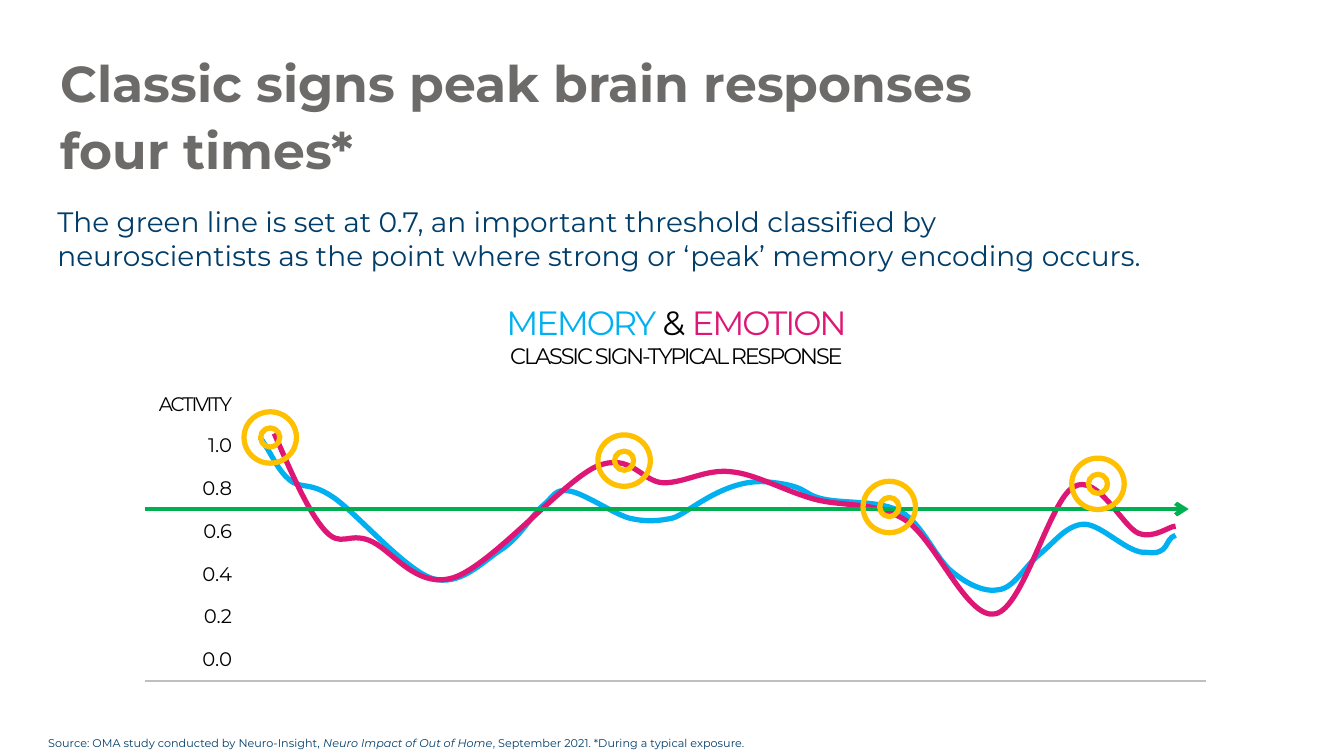
from dataclasses import dataclass

from lxml import etree
from pptx import Presentation
from pptx.dml.color import RGBColor
from pptx.enum.shapes import MSO_CONNECTOR, MSO_SHAPE
from pptx.enum.text import MSO_ANCHOR, PP_ALIGN
from pptx.oxml.ns import qn
from pptx.util import Inches, Pt

STRAIGHT = MSO_CONNECTOR.STRAIGHT
OVAL = MSO_SHAPE.OVAL
TOP = MSO_ANCHOR.TOP
LEFT, CENTER, RIGHT = PP_ALIGN.LEFT, PP_ALIGN.CENTER, PP_ALIGN.RIGHT


@dataclass(frozen=True)
class Theme:
    """Colours, font and type sizes of the slide."""
    font: str = "Montserrat"
    heading: str = "6C6B6A"
    navy: str = "003D69"
    black: str = "000000"
    memory: str = "00B0F0"
    emotion: str = "DE1776"
    threshold: str = "00B050"
    peak: str = "FFC000"
    axis: str = "BFBFBF"
    title_size: int = 36
    legend_size: int = 24
    intro_size: int = 20
    caption_size: int = 16
    label_size: int = 14
    source_size: int = 8
    curve_width: float = 3.75
    tight: int = -150


THEME = Theme()

MEMORY = [
    (1.58, 1.34),
    (1.7, 1.51), (1.75, 1.66), (1.87, 1.76),
    (1.99, 1.86), (2.06, 1.77), (2.3, 1.93),
    (2.54, 2.09), (3.01, 2.65), (3.29, 2.74),
    (3.56, 2.82), (3.78, 2.58), (3.96, 2.46),
    (4.15, 2.34), (4.27, 2.12), (4.38, 2.02),
    (4.5, 1.92), (4.5, 1.85), (4.64, 1.87),
    (4.79, 1.89), (5.07, 2.09), (5.24, 2.14),
    (5.41, 2.18), (5.53, 2.17), (5.67, 2.14),
    (5.82, 2.1), (6.17, 1.75), (6.6, 1.78),
    (7.03, 1.82), (6.94, 1.9), (7.16, 1.95),
    (7.39, 2.0), (7.73, 1.96), (7.94, 2.08),
    (8.15, 2.2), (8.28, 2.54), (8.44, 2.67),
    (8.6, 2.8), (8.77, 2.88), (8.91, 2.85),
    (9.06, 2.83), (9.17, 2.61), (9.31, 2.5),
    (9.45, 2.39), (9.57, 2.21), (9.75, 2.2),
    (9.93, 2.2), (10.19, 2.5), (10.37, 2.48),
    (10.61, 2.51), (10.54, 2.35), (10.66, 2.31),
]
EMOTION = [
    (1.72, 1.3),
    (1.89, 1.69), (2.06, 2.08), (2.22, 2.26),
    (2.38, 2.44), (2.45, 2.28), (2.66, 2.36),
    (2.88, 2.44), (3.12, 2.85), (3.5, 2.73),
    (3.87, 2.61), (4.57, 1.79), (4.91, 1.63),
    (5.26, 1.48), (5.36, 1.78), (5.58, 1.79),
    (5.8, 1.79), (6.0, 1.65), (6.25, 1.68),
    (6.49, 1.7), (6.78, 1.87), (7.07, 1.95),
    (7.35, 2.03), (7.68, 1.97), (7.98, 2.16),
    (8.28, 2.35), (8.59, 3.15), (8.87, 3.09),
    (9.15, 3.04), (9.41, 1.96), (9.65, 1.83),
    (9.88, 1.69), (10.13, 2.22), (10.29, 2.29),
    (10.45, 2.35), (10.59, 2.22), (10.66, 2.22),
]
PEAKS = [(1.68, 1.34), (5.19, 1.57), (7.82, 2.03), (9.89, 1.8)]


def add_text(s, box, paragraphs, align=LEFT, inset=(0.1, 0.05), spacing=None):
    """Add a text box whose paragraphs are lists of (text, size, colour, style)."""
    tf = s.shapes.add_textbox(*map(Inches, box)).text_frame
    tf.word_wrap = True
    tf.vertical_anchor = TOP
    tf.margin_left = tf.margin_right = Inches(inset[0])
    tf.margin_top = tf.margin_bottom = Inches(inset[1])
    for i, runs in enumerate(paragraphs):
        p = tf.add_paragraph() if i else tf.paragraphs[0]
        p.alignment = align
        if spacing:
            p.line_spacing = spacing
        for text, size, color, style in runs:
            r = p.add_run()
            r.text = text
            r.font.name = THEME.font
            r.font.size = Pt(size)
            r.font.color.rgb = RGBColor.from_string(color)
            r.font.bold = style == "bold"
            r.font.italic = style == "italic"
            if style == "tight":
                r.font._element.set("spc", str(THEME.tight))


def style_line(sp, color, width):
    """Set the colour and width in points of an outline."""
    sp.line.color.rgb = RGBColor.from_string(color)
    sp.line.width = Pt(width)


def add_rule(s, x1, x2, y, color, width, arrow=False):
    """Add a horizontal line, with an arrowhead at its right end if asked."""
    line = s.shapes.add_connector(
        STRAIGHT, Inches(x1), Inches(y), Inches(x2), Inches(y))
    style_line(line, color, width)
    if arrow:
        etree.SubElement(line.line._get_or_add_ln(), qn("a:tailEnd"), type="arrow")
    etree.SubElement(line._element.spPr, qn("a:effectLst"))


def add_curve(s, x, y, points, color):
    """Add an open Bezier curve: a start, then three points for each segment."""
    pts = [(Inches(x + px), Inches(y + py)) for px, py in points]
    builder = s.shapes.build_freeform(*pts[0])
    builder.add_line_segments(pts[1:], close=False)
    sp = builder.convert_to_shape()
    sp.shadow.inherit = False
    sp.fill.background()
    style_line(sp, color, THEME.curve_width)
    path = next(sp._element.iter(qn("a:path")))
    steps = path.findall(qn("a:lnTo"))
    for i in range(0, len(steps), 3):
        bezier = etree.SubElement(path, qn("a:cubicBezTo"))
        for step in steps[i:i + 3]:
            bezier.append(step[0])
            path.remove(step)


def add_peak(s, cx, cy):
    """Add a target of two rings around a centre."""
    for w, h in ((0.52, 0.51), (0.19, 0.19)):
        ring = s.shapes.add_shape(
            OVAL, Inches(cx - w / 2), Inches(cy - h / 2), Inches(w), Inches(h))
        ring.shadow.inherit = False
        ring.fill.background()
        style_line(ring, THEME.peak, THEME.curve_width)


def add_header(s, x, y, w):
    """Add the title and the introduction below it."""
    add_text(s, (x + 0.13, y, 9.23, 1.34),
             [[("Classic signs peak brain responses four times*",
                THEME.title_size, THEME.heading, "bold")]],
             inset=(0, 0), spacing=1.1)
    add_text(s, (x, y + 1.52, w, 0.77),
             [[("The green line is set at 0.7, an important threshold classified by "
                "neuroscientists as the point where strong or ‘peak’ memory "
                "encoding occurs.", THEME.intro_size, THEME.navy, None)]])


def add_legend(s, x, y, w):
    """Add the coloured heading of the graph."""
    size = THEME.legend_size
    add_text(s, (x, y, w, 0.77),
             [[("MEMORY", size, THEME.memory, "tight"),
               (" & ", size, THEME.black, "tight"),
               ("EMOTION", size, THEME.emotion, "tight")],
              [("CLASSIC SIGN-TYPICAL RESPONSE",
                THEME.caption_size, THEME.black, "tight")]], CENTER)


def add_graph(s, x, y, w):
    """Add the scale, both curves, the threshold and the peaks."""
    add_rule(s, x + 0.44, x + w, y + 3.76, THEME.axis, 1.5)
    labels = [("ACTIVITY", 0.84, "tight")]
    labels += [(f"{1 - i / 5:.1f}", 1.25 + i * 0.424, None) for i in range(6)]
    for text, top, style in labels:
        add_text(s, (x + 0.25, y + top, 1.15, 0.34),
                 [[(text, THEME.label_size, THEME.black, style)]], RIGHT)
    add_curve(s, x, y, MEMORY, THEME.memory)
    add_curve(s, x, y, EMOTION, THEME.emotion)
    add_rule(s, x + 0.44, x + w - 0.17, y + 2.05, THEME.threshold, 3, arrow=True)
    for cx, cy in PEAKS:
        add_peak(s, x + cx, y + cy)


def add_source(s, x, y, w):
    """Add the source note."""
    size, color = THEME.source_size, THEME.navy
    add_text(s, (x, y, w, 0.24),
             [[("Source: OMA study conducted by Neuro-Insight, ", size, color, None),
               ("Neuro Impact of Out of Home", size, color, "italic"),
               (", September 2021. *During a typical exposure.", size, color, None)]])


def main():
    """Build the slide and save it."""
    prs = Presentation()
    prs.slide_width, prs.slide_height = Inches(13.33), Inches(7.5)
    s = prs.slides.add_slide(prs.slide_layouts[6])
    add_header(s, 0.47, 0.46, 11.08)
    add_legend(s, 3.65, 2.95, 6.12)
    add_graph(s, 1, 3, 10.96)
    add_source(s, 0.38, 7.26, 12.72)
    prs.save("out.pptx")


if __name__ == "__main__":
    main()
